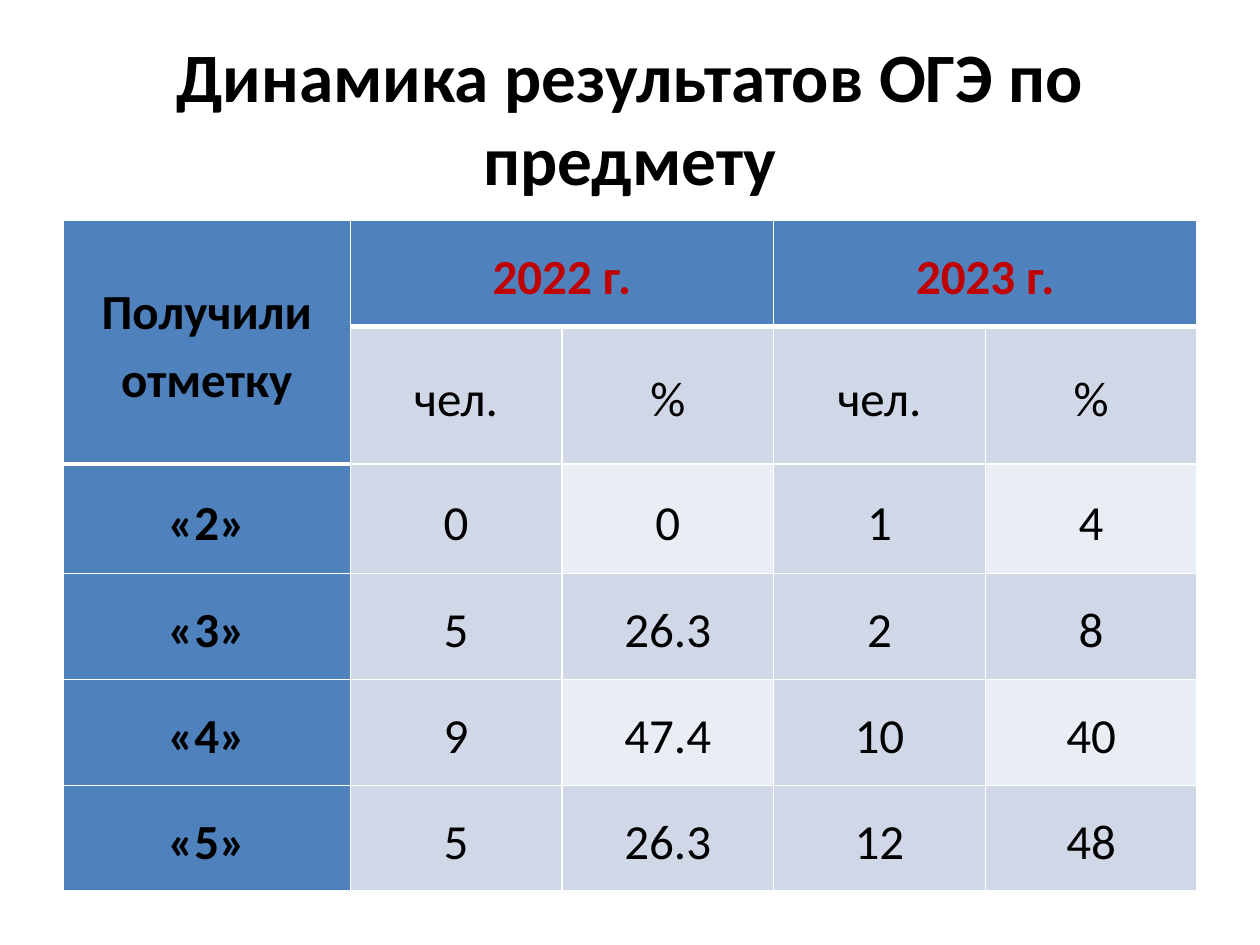
from dataclasses import dataclass

from lxml import etree
from pptx import Presentation
from pptx.dml.color import RGBColor
from pptx.enum.text import MSO_ANCHOR, PP_ALIGN
from pptx.oxml.ns import qn
from pptx.util import Inches, Pt

CENTER = PP_ALIGN.CENTER
MIDDLE = MSO_ANCHOR.MIDDLE
TITLE_ONLY = 5

FONT = "Calibri"
BLACK, RED, WHITE = "000000", "C00000", "FFFFFF"
BLUE, BAND, LIGHT = "4F81BD", "D0D8E8", "E9EDF4"
THIN, THICK = 1, 3

COLUMN_WIDTHS = [2.28] + [1.68] * 4
ROW_HEIGHTS = [0.84, 0.77, 0.87, 0.84, 0.84, 0.84]
RESULTS = [
    ["Получили отметку", "2022 г.", "", "2023 г.", ""],
    ["", "чел.", "%", "чел.", "%"],
    ["«2»", "0", "0", "1", "4"],
    ["«3»", "5", "26.3", "2", "8"],
    ["«4»", "9", "47.4", "10", "40"],
    ["«5»", "5", "26.3", "12", "48"],
]


@dataclass
class CellStyle:
    fill: str
    color: str = BLACK
    bold: bool = False


def rgb(value: str) -> RGBColor:
    return RGBColor.from_string(value)


def format_text(paragraph, size: float, color: str, bold: bool) -> None:
    paragraph.alignment = CENTER
    for name, value in {"name": FONT, "size": Pt(size), "bold": bold}.items():
        setattr(paragraph.font, name, value)
    paragraph.font.color.rgb = rgb(color)


def cell_style(row: int, column: int) -> CellStyle:
    if column == 0:
        return CellStyle(BLUE, bold=True)
    if row == 0:
        return CellStyle(BLUE, RED, bold=True)
    # Percent columns are lighter in every second row of marks
    is_light = row in (2, 4) and column % 2 == 0
    return CellStyle(LIGHT if is_light else BAND)


def set_borders(cell, row: int, column: int) -> None:
    header_end = 1 if column == 0 else 0
    widths = {
        "a:lnL": THIN,
        "a:lnR": THIN,
        "a:lnT": THICK if row == header_end + 1 else THIN,
        "a:lnB": THICK if row == header_end else THIN,
    }
    properties = cell._tc.get_or_add_tcPr()
    for tag, width in widths.items():
        line = etree.SubElement(properties, qn(tag), w=str(Pt(width)))
        solid = etree.SubElement(line, qn("a:solidFill"))
        etree.SubElement(solid, qn("a:srgbClr"), val=WHITE)


def draw_cell(cell, text: str, row: int, column: int) -> None:
    style = cell_style(row, column)
    set_borders(cell, row, column)
    cell.fill.solid()
    cell.fill.fore_color.rgb = rgb(style.fill)
    cell_format = {
        "vertical_anchor": MIDDLE,
        "margin_left": Inches(0.07),
        "margin_right": Inches(0.07),
        "margin_top": 0,
        "margin_bottom": 0,
    }
    for name, value in cell_format.items():
        setattr(cell, name, value)
    paragraph = cell.text_frame.paragraphs[0]
    paragraph.text = text
    paragraph.line_spacing = 1.15
    format_text(paragraph, 28, style.color, style.bold)


def main() -> None:
    presentation = Presentation()
    presentation.slide_width = Inches(10)
    presentation.slide_height = Inches(7.5)
    slide = presentation.slides.add_slide(presentation.slide_layouts[TITLE_ONLY])

    # Title
    title = slide.shapes.title
    title.left, title.top = Inches(0.5), Inches(0.3)
    title.width, title.height = Inches(9), Inches(1.25)
    title.text_frame.text = "Динамика результатов ОГЭ по предмету"
    title.text_frame.vertical_anchor = MIDDLE
    format_text(title.text_frame.paragraphs[0], 39.6, BLACK, True)

    # Exam results by year
    results = slide.shapes.add_table(
        len(ROW_HEIGHTS), len(COLUMN_WIDTHS),
        Inches(0.5), Inches(1.75), Inches(9), Inches(5),
    ).table
    for column, width in zip(results.columns, COLUMN_WIDTHS):
        column.width = Inches(width)
    for row, height in zip(results.rows, ROW_HEIGHTS):
        row.height = Inches(height)
    for row, texts in enumerate(RESULTS):
        for column, text in enumerate(texts):
            draw_cell(results.cell(row, column), text, row, column)

    # Merged headings
    results.cell(0, 0).merge(results.cell(1, 0))
    for year_column in (1, 3):
        results.cell(0, year_column).merge(results.cell(0, year_column + 1))

    presentation.save("out.pptx")


if __name__ == "__main__":
    main()
